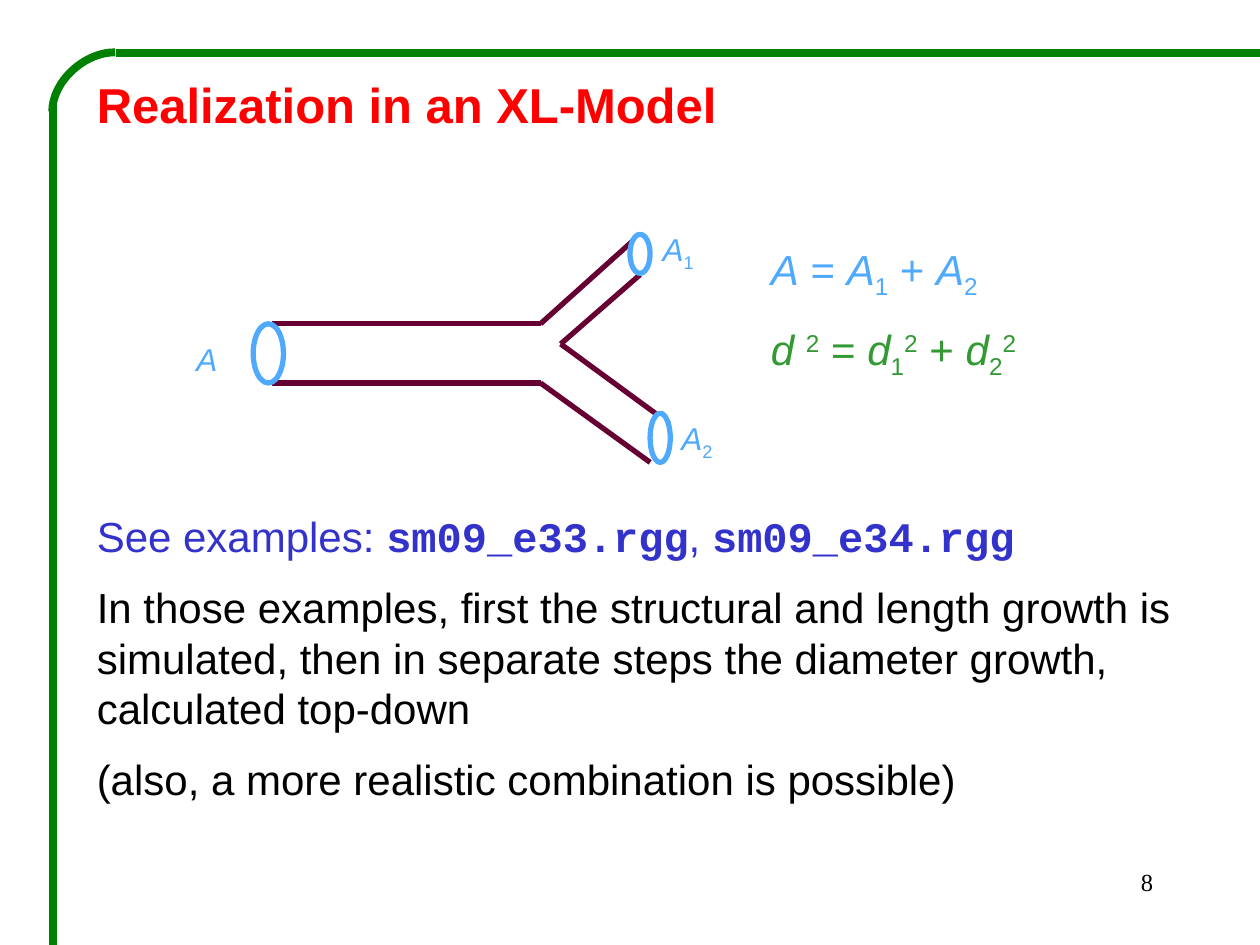
import pptx
import pptx.util
import pptx.dml.color
import pptx.enum.shapes
import pptx.enum.text
import pptx.oxml
import pptx.oxml.ns

Inches, Pt = pptx.util.Inches, pptx.util.Pt
CONNECTOR = pptx.enum.shapes.MSO_CONNECTOR
ALIGN = pptx.enum.text.PP_ALIGN

THEME = {
    "frame": "008000", "branch": "660033", "section": "4FAAFD", "diameter": "339933",
    "title": "FF0000", "examples": "3333CC", "text": "000000", "paper": "FFFFFF",
    "sans": "Arial", "mono": "Courier New", "serif": "Times New Roman",
    "title_size": 28, "body_size": 24, "label_size": 18, "number_size": 14,
}

# Content: a paragraph is a list of (text, run format) pairs
ITALIC = {"italic": True}
SUB, SUPER = {"baseline": -25}, {"baseline": 30}
CODE = {"bold": True, "font": THEME["mono"]}

TITLE = [[("Realization in an XL-Model", {"bold": True})]]
AREA_RULE = [("A", ITALIC), (" = ", {}), ("A", ITALIC), ("1", SUB),
             (" + ", {}), ("A", ITALIC), ("2", SUB)]
DIAMETER_RULE = [("d ", ITALIC), ("2", SUPER), (" = ", {}),
                 ("d", ITALIC), ("1", SUB), ("2", SUPER), (" + ", {}),
                 ("d", ITALIC), ("2", SUB), ("2", SUPER)]
BODY = [
    [("See examples: ", {}), ("sm09_e33.rgg", CODE), (", ", {}), ("sm09_e34.rgg", CODE)],
    [("In those examples, first the structural and length growth is simulated, then in "
      "separate steps the diameter growth, calculated top-down", {})],
    [("(also, a more realistic combination is possible)", {})],
]
BODY_COLORS = [THEME["examples"], THEME["text"], THEME["text"]]

# Outline of the forked stem
FORK_TOP, FORK_BOTTOM, CROTCH = (4.29, 2.57), (4.29, 3.04), (4.45, 2.73)
BRANCH_LINES = [
    ((2.16, 3.04), FORK_BOTTOM), ((2.16, 2.57), FORK_TOP),
    (FORK_TOP, (5.08, 1.86)), (CROTCH, (5.08, 2.18)),
    (FORK_BOTTOM, (5.16, 3.67)), (CROTCH, (5.31, 3.36)),
]
# Cross-section ellipse, its label, and the label's box
SECTIONS = [
    ((2.01, 2.57, 0.24, 0.47), [("A", ITALIC)], (1.46, 2.65, 0.39, 0.4)),
    ((5.16, 3.28, 0.16, 0.39), [("A", ITALIC), ("2", SUB)], (5.31, 3.28, 0.55, 0.4)),
    ((5.00, 1.86, 0.16, 0.31), [("A", ITALIC), ("1", SUB)], (5.16, 1.78, 0.55, 0.4)),
]
FRAME_LINES = [((10, 0.42), (0.92, 0.42)), ((0.42, 0.83), (0.42, 7.5))]

deck = pptx.Presentation()
deck.slide_width, deck.slide_height = Inches(10), Inches(7.5)
slide = deck.slides.add_slide(deck.slide_layouts[6])


def rgb(color):
    return pptx.dml.color.RGBColor.from_string(color)


def add_text(box, paragraphs, *, size, colors, font=THEME["sans"], align=ALIGN.LEFT,
             gap=0, leading=None, wrap=True):
    frame = slide.shapes.add_textbox(*map(Inches, box)).text_frame
    frame.word_wrap = wrap
    for index, (runs, color) in enumerate(zip(paragraphs, colors)):
        paragraph = frame.add_paragraph() if index else frame.paragraphs[0]
        paragraph.alignment = align
        paragraph.space_before = Pt(gap if index else 0)
        if leading:
            paragraph.line_spacing = Pt(leading)
        for words, style in runs:
            run = paragraph.add_run()
            run.text = words
            run.font.name = style.get("font", font)
            run.font.size = Pt(size)
            run.font.bold = style.get("bold", False)
            run.font.italic = style.get("italic", False)
            run.font.color.rgb = rgb(color)
            if "baseline" in style:
                run.font._element.set("baseline", str(style["baseline"] * 1000))


def add_line(start, end, color, width, kind=CONNECTOR.STRAIGHT):
    line = slide.shapes.add_connector(kind, *map(Inches, start + end))
    line.line.color.rgb = rgb(color)
    line.line.width = Pt(width)
    line._element.spPr.append(pptx.oxml.parse_xml(
        f"<a:effectLst {pptx.oxml.ns.nsdecls('a')}/>"))
    return line


# Forked stem
for start, end in BRANCH_LINES:
    add_line(start, end, THEME["branch"], 3)

# Cross-sections and their labels
for box, label, label_box in SECTIONS:
    section = slide.shapes.add_shape(pptx.enum.shapes.MSO_SHAPE.OVAL, *map(Inches, box))
    section.shadow.inherit = False
    section.fill.solid()
    section.fill.fore_color.rgb = rgb(THEME["paper"])
    section.line.color.rgb = rgb(THEME["section"])
    section.line.width = Pt(3)
    add_text(label_box, [label], size=THEME["label_size"], colors=[THEME["section"]],
             wrap=False)

# Formulas, title and body
add_text((6.02, 1.88, 2.36, 1.11), [AREA_RULE, DIAMETER_RULE], size=THEME["body_size"],
         colors=[THEME["section"], THEME["diameter"]], gap=13, wrap=False)
add_text((0.67, 0.54, 8.9, 0.6), TITLE, size=THEME["title_size"], colors=[THEME["title"]])
add_text((0.67, 4, 8.9, 2.82), BODY, size=THEME["body_size"], colors=BODY_COLORS,
         gap=12, leading=28.8)

# Frame with its rounded corner
for start, end in FRAME_LINES:
    add_line(start, end, THEME["frame"], 4.5)
corner = add_line((0.43, 0.4), (0.9, 0.9), THEME["frame"], 4.5, CONNECTOR.CURVE)
corner._element.spPr.find(pptx.oxml.ns.qn("a:prstGeom")).set("prst", "curvedConnector2")
corner._element.spPr.find(pptx.oxml.ns.qn("a:xfrm")).set("rot", str(270 * 60000))

# Slide number
add_text((7.17, 6.83, 2.08, 0.5), [[("8", {})]], size=THEME["number_size"],
         colors=[THEME["text"]], font=THEME["serif"], align=ALIGN.RIGHT)

deck.save("out.pptx")
